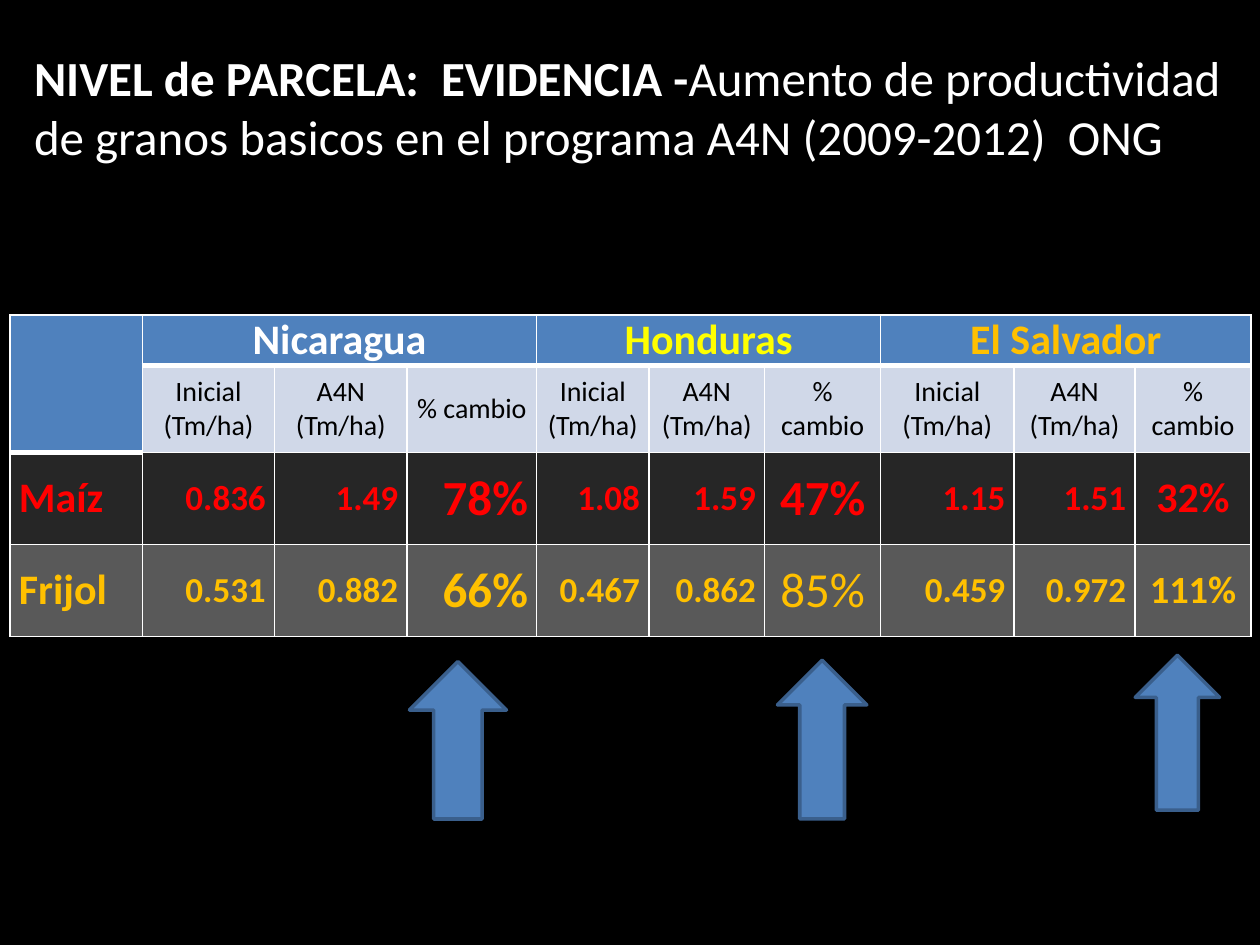
from dataclasses import dataclass

from lxml.etree import SubElement
from pptx import Presentation
from pptx.dml.color import RGBColor
from pptx.enum.shapes import MSO_SHAPE
from pptx.enum.text import MSO_ANCHOR, MSO_AUTO_SIZE, PP_ALIGN
from pptx.oxml.ns import qn
from pptx.util import Inches, Pt


@dataclass(frozen=True)
class Theme:
    font: str = "Calibri"
    black: str = "000000"
    white: str = "FFFFFF"
    blue: str = "4F81BD"
    arrow_line: str = "3A5F8C"
    pale_blue: str = "D0D8E8"
    yellow: str = "FFFF00"
    gold: str = "FFC000"
    red: str = "FF0000"
    dark_gray: str = "262626"
    gray: str = "595959"
    title_size: int = 28
    heading_size: int = 24
    label_size: int = 16
    value_size: int = 20
    large_size: int = 28
    thin: int = 1
    thick: int = 3


THEME = Theme()
COLUMN_WIDTHS = [1.05, 1.05, 1.05, 1.03, 0.89, 0.92, 0.92, 1.06, 0.96, 0.92]
ROW_HEIGHTS = [0.39, 0.69, 0.73, 0.73]
COUNTRIES = [
    ("Nicaragua", THEME.white),
    ("Honduras", THEME.yellow),
    ("El Salvador", THEME.gold),
]
MEASURES = ["Inicial (Tm/ha)", "A4N\n(Tm/ha)", "% cambio"]
CROPS = [
    ("Maíz", THEME.red, THEME.dark_gray,
     ["0.836", "1.49", "78%", "1.08", "1.59", "47%", "1.15", "1.51", "32%"]),
    ("Frijol", THEME.gold, THEME.gray,
     ["0.531", "0.882", "66%", "0.467", "0.862", "85%", "0.459", "0.972", "111%"]),
]
CHANGE_SIZES = {"32%": 24, "111%": 22}
ARROWS = [
    (9.01, 5.2, 0.67, 1.23),
    (3.25, 5.25, 0.77, 1.25),
    (6.17, 5.24, 0.71, 1.26),
]


def write_text(paragraph, text, size, color, bold=False, align=PP_ALIGN.LEFT):
    paragraph.alignment = align
    run = paragraph.add_run()
    run.text = text
    run.font.name = THEME.font
    run.font.size = Pt(size)
    run.font.bold = bold
    run.font.color.rgb = RGBColor.from_string(color)


def set_fill(target, color):
    target.fill.solid()
    target.fill.fore_color.rgb = RGBColor.from_string(color)


def add_title(slide):
    title = slide.shapes.title
    title.left, title.top = Inches(0.17), Inches(0.33)
    title.width, title.height = Inches(9.92), Inches(1.04)
    frame = title.text_frame
    frame.word_wrap = True
    frame.auto_size = MSO_AUTO_SIZE.SHAPE_TO_FIT_TEXT
    frame.vertical_anchor = MSO_ANCHOR.TOP
    paragraph = frame.paragraphs[0]
    write_text(paragraph, "NIVEL de PARCELA:  EVIDENCIA -",
               size=THEME.title_size, color=THEME.white, bold=True)
    write_text(paragraph,
               "Aumento de productividad de granos basicos en el programa A4N (2009-2012)  ONG",
               size=THEME.title_size, color=THEME.white)


def set_borders(cell, top, bottom):
    properties = cell._tc.get_or_add_tcPr()
    widths = {"a:lnL": THEME.thin, "a:lnR": THEME.thin, "a:lnT": top, "a:lnB": bottom}
    for tag, width in widths.items():
        line = SubElement(properties, qn(tag), w=str(Pt(width)))
        fill = SubElement(line, qn("a:solidFill"))
        SubElement(fill, qn("a:srgbClr"), val=THEME.white)


def format_cell(cell, row, column):
    below_header = (row, column) == (2, 0) or (row == 1 and column > 0)
    above_line = (row, column) == (1, 0) or (row == 0 and column > 0)
    set_borders(cell,
                top=THEME.thick if below_header else THEME.thin,
                bottom=THEME.thick if above_line else THEME.thin)
    row_fills = [THEME.blue, THEME.pale_blue] + [crop[2] for crop in CROPS]
    set_fill(cell, THEME.blue if row < 2 and column == 0 else row_fills[row])
    cell.margin_left = cell.margin_right = Inches(0.07)
    cell.margin_top = cell.margin_bottom = 0
    cell.vertical_anchor = MSO_ANCHOR.BOTTOM if row == 0 else MSO_ANCHOR.MIDDLE


def write_cell(cell, text, **text_format):
    frame = cell.text_frame
    for index, line in enumerate(text.split("\n")):
        paragraph = frame.add_paragraph() if index else frame.paragraphs[0]
        write_text(paragraph, line, **text_format)


def fill_headers(table):
    table.cell(0, 0).merge(table.cell(1, 0))
    for index, (country, color) in enumerate(COUNTRIES):
        first = 1 + index * len(MEASURES)
        table.cell(0, first).merge(table.cell(0, first + len(MEASURES) - 1))
        write_cell(table.cell(0, first), country, size=THEME.heading_size,
                   color=color, bold=True, align=PP_ALIGN.CENTER)
        for offset, measure in enumerate(MEASURES):
            write_cell(table.cell(1, first + offset), measure, size=THEME.label_size,
                       color=THEME.black, align=PP_ALIGN.CENTER)


def fill_crops(table):
    for row, (crop, color, _, values) in enumerate(CROPS, start=2):
        write_cell(table.cell(row, 0), crop, size=THEME.heading_size, color=color, bold=True)
        for column, value in enumerate(values, start=1):
            is_change = value.endswith("%")
            size = CHANGE_SIZES.get(value, THEME.large_size) if is_change else THEME.value_size
            centered = is_change and column > len(MEASURES)
            write_cell(table.cell(row, column), value, size=size, color=color,
                       bold=value != "85%",
                       align=PP_ALIGN.CENTER if centered else PP_ALIGN.RIGHT)


def add_yield_table(slide):
    table = slide.shapes.add_table(
        len(ROW_HEIGHTS), len(COLUMN_WIDTHS), Inches(0.08), Inches(2.5),
        Inches(sum(COLUMN_WIDTHS)), Inches(sum(ROW_HEIGHTS))).table
    for column, width in zip(table.columns, COLUMN_WIDTHS):
        column.width = Inches(width)
    for row, height in zip(table.rows, ROW_HEIGHTS):
        row.height = Inches(height)
    for row in range(len(ROW_HEIGHTS)):
        for column in range(len(COLUMN_WIDTHS)):
            format_cell(table.cell(row, column), row, column)
    fill_headers(table)
    fill_crops(table)


def add_arrow(slide, left, top, width, height):
    arrow = slide.shapes.add_shape(MSO_SHAPE.UP_ARROW, Inches(left), Inches(top),
                                   Inches(width), Inches(height))
    arrow.shadow.inherit = False
    set_fill(arrow, THEME.blue)
    arrow.line.color.rgb = RGBColor.from_string(THEME.arrow_line)
    arrow.line.width = Pt(2)


def main():
    presentation = Presentation()
    presentation.slide_width, presentation.slide_height = Inches(10), Inches(7.5)
    title_only = presentation.slide_layouts.get_by_name("Title Only")
    slide = presentation.slides.add_slide(title_only)
    set_fill(slide.background, THEME.black)
    add_title(slide)
    add_yield_table(slide)
    for bounds in ARROWS:
        add_arrow(slide, *bounds)
    presentation.save("out.pptx")


if __name__ == "__main__":
    main()
